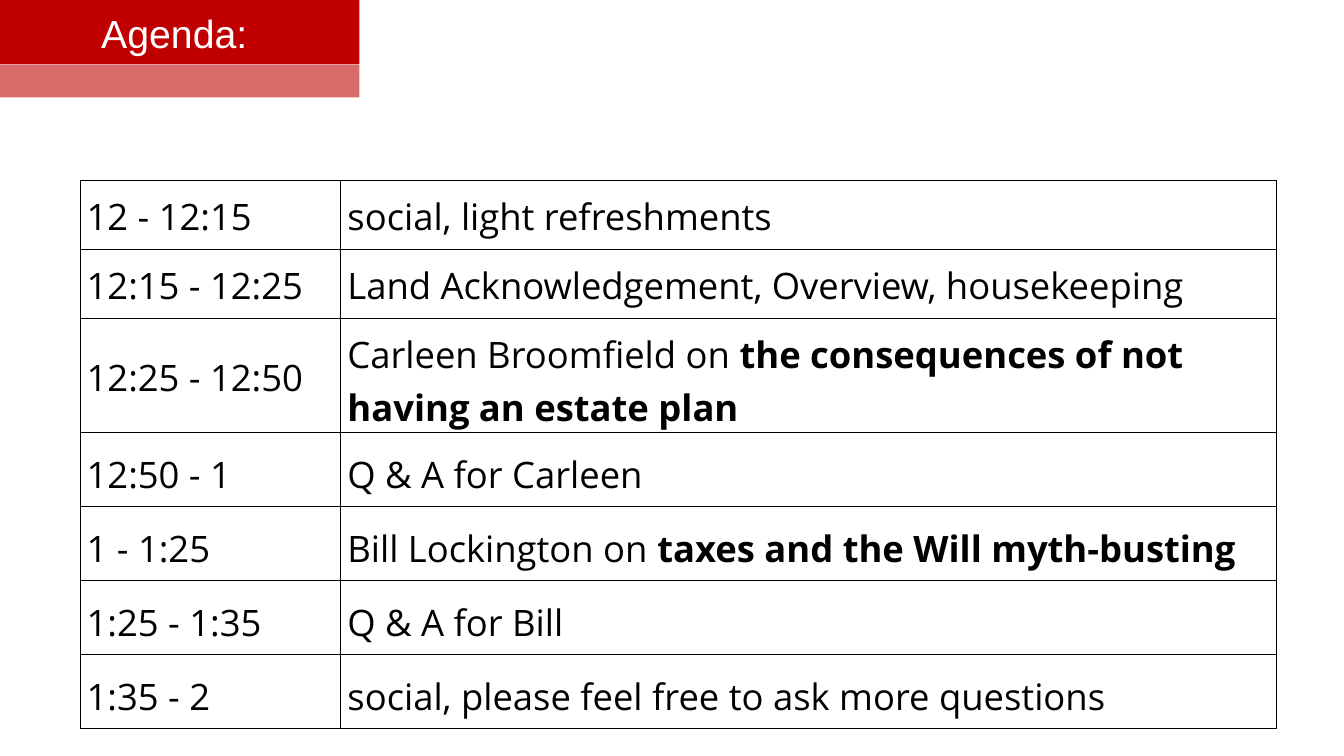
"""Build the agenda slide: a red title band above a table of times and topics."""
from typing import Any, NamedTuple

from lxml import etree
from pptx import Presentation
from pptx import util as u
from pptx.dml.color import RGBColor
from pptx.enum import shapes, text
from pptx.oxml.ns import qn

COLORS = {"red": "C00000", "rose": "DA6B6B", "white": "FFFFFF", "black": "000000"}
TITLE_FONT = {"name": "Arial", "size": u.Pt(42)}
CELL_FONT = {"name": "Open Sans", "size": u.Pt(39)}
NO_MARGINS = dict.fromkeys(("margin_left", "margin_top", "margin_right", "margin_bottom"), 0)
CELL_FORMAT = {
    **dict.fromkeys(NO_MARGINS, u.Inches(0.1)),
    "vertical_anchor": text.MSO_ANCHOR.MIDDLE,
}
COLUMN_WIDTHS = (3.88, 13.92)


class Band(NamedTuple):
    top: float
    height: float
    color: str


class Session(NamedTuple):
    time: str
    topic: str
    emphasis: str = ""
    height: float = 1.1
    spacing: float = 1.2


BANDS = (Band(0.97, 0.48, "rose"), Band(0, 0.96, "red"))
SESSIONS = (
    Session("12 - 12:15", "social, light refreshments", height=1.03, spacing=1.08),
    Session("12:15 - 12:25", "Land Acknowledgement, Overview, housekeeping",
            height=1.03, spacing=1.08),
    Session("12:25 - 12:50", "Carleen Broomfield on ",
            "the consequences of not having an estate plan", 1.7, 1.08),
    Session("12:50 - 1", "Q & A for Carleen"),
    Session("1 - 1:25", "Bill Lockington on ", "taxes and the Will myth-busting"),
    Session("1:25 - 1:35", "Q & A for Bill"),
    Session("1:35 - 2", "social, please feel free to ask more questions"),
)


def rgb(color: str) -> RGBColor:
    """Return the named colour."""
    return RGBColor.from_string(COLORS[color])


def apply(target: Any, values: dict[str, Any]) -> None:
    """Set each format value on the target."""
    for name, value in values.items():
        setattr(target, name, value)


def add_run(p: Any, words: str, font: dict[str, Any], color: str) -> None:
    """Append a formatted run to a paragraph."""
    r = p.add_run()
    r.text = words
    apply(r.font, font)
    r.font.color.rgb = rgb(color)


def add_band(s: Any, band: Band) -> None:
    """Draw one title band from the left edge."""
    sp = s.shapes.add_shape(shapes.MSO_SHAPE.RECTANGLE, 0, u.Inches(band.top),
                            u.Inches(5.35), u.Inches(band.height))
    sp.shadow.inherit = False
    sp.fill.solid()
    sp.fill.fore_color.rgb = rgb(band.color)
    sp.line.fill.background()


def add_title(s: Any, words: str) -> None:
    """Write the title over the bands."""
    sp = s.shapes.add_textbox(u.Inches(0.21), u.Inches(0.12), u.Inches(4.93), u.Inches(1.09))
    tf = sp.text_frame
    apply(tf, {**NO_MARGINS, "word_wrap": True})
    p = tf.paragraphs[0]
    apply(p, {"alignment": text.PP_ALIGN.CENTER, "line_spacing": 1.02})
    add_run(p, words, TITLE_FONT, "white")


def add_borders(cell: Any) -> None:
    """Give a cell thin black lines on all sides."""
    tc_pr = cell._tc.get_or_add_tcPr()
    for i, side in enumerate(("a:lnL", "a:lnR", "a:lnT", "a:lnB")):
        ln = etree.Element(qn(side), w=str(u.Pt(0.75)))
        fill = etree.SubElement(ln, qn("a:solidFill"))
        etree.SubElement(fill, qn("a:srgbClr"), val=COLORS["black"])
        tc_pr.insert(i, ln)


def fill_cell(cell: Any, words: str, emphasis: str, spacing: float) -> None:
    """Write plain words and bold emphasis into a cell."""
    apply(cell, CELL_FORMAT)
    cell.fill.background()
    add_borders(cell)
    p = cell.text_frame.paragraphs[0]
    p.line_spacing = spacing
    add_run(p, words, CELL_FONT, "black")
    if emphasis:
        add_run(p, emphasis, {**CELL_FONT, "bold": True}, "black")


def add_agenda(s: Any, sessions: tuple[Session, ...]) -> None:
    """Draw the table of sessions."""
    height = sum(session.height for session in sessions)
    table = s.shapes.add_table(len(sessions), len(COLUMN_WIDTHS), u.Inches(1.19), u.Inches(2.68),
                               u.Inches(sum(COLUMN_WIDTHS)), u.Inches(height)).table
    apply(table, {"first_row": False, "horz_banding": False})
    for column, width in zip(table.columns, COLUMN_WIDTHS):
        column.width = u.Inches(width)
    for row, session in zip(table.rows, sessions):
        row.height = u.Inches(session.height)
        fill_cell(row.cells[0], session.time, "", session.spacing)
        fill_cell(row.cells[1], session.topic, session.emphasis, session.spacing)


def main() -> None:
    """Build and save the slide."""
    prs = Presentation()
    apply(prs, {"slide_width": u.Inches(20), "slide_height": u.Inches(11.25)})
    s = prs.slides.add_slide(prs.slide_layouts[6])
    for band in BANDS:
        add_band(s, band)
    add_title(s, "Agenda: ")
    add_agenda(s, SESSIONS)
    prs.save("out.pptx")


if __name__ == "__main__":
    main()
